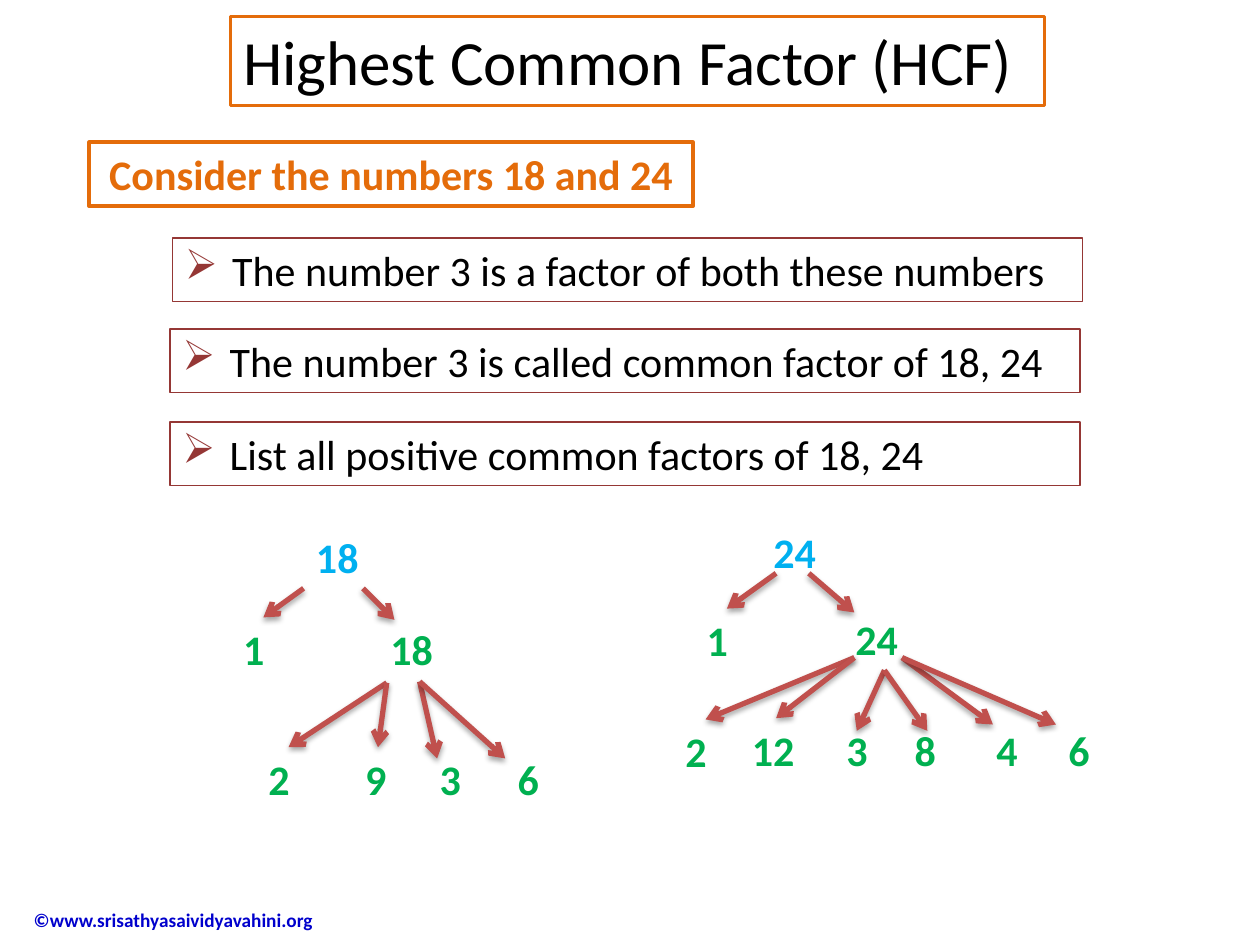
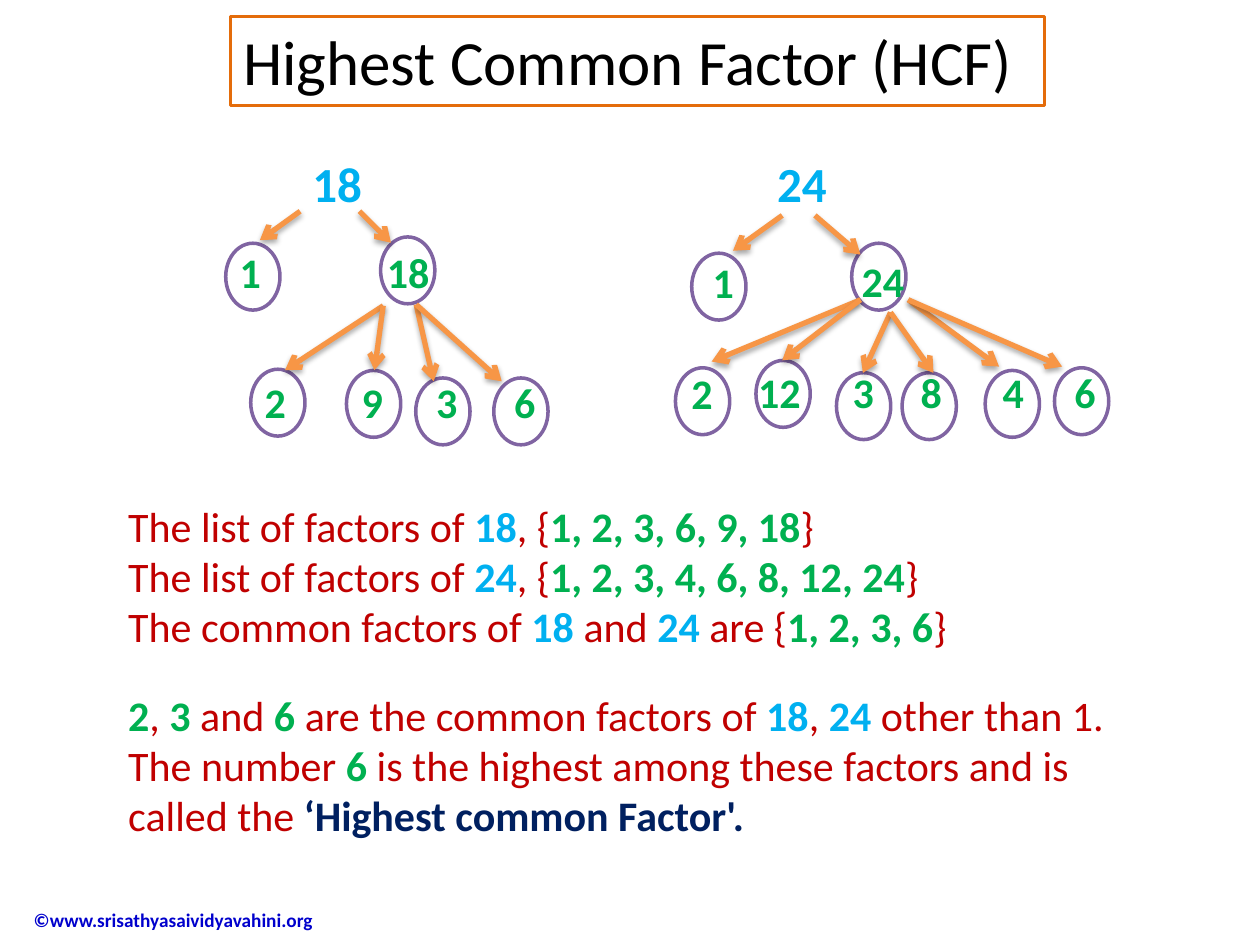
import pptx
import pptx.util
import pptx.dml.color
import pptx.enum.shapes
import pptx.enum.text
import pptx.oxml
import pptx.oxml.ns

Pt = pptx.util.Pt
RGB = pptx.dml.color.RGBColor
FONT = "Calibri"
BLACK = RGB(0, 0, 0)
WHITE = RGB(0xFF, 0xFF, 0xFF)
ORANGE = RGB(0xE4, 0x6C, 0x0A)
PEACH = RGB(0xF7, 0x96, 0x46)
MAROON = RGB(0x95, 0x37, 0x35)
BRICK = RGB(0xC0, 0x50, 0x4D)
RED = RGB(0xC0, 0, 0)
SKY = RGB(0, 0xB0, 0xF0)
GREEN = RGB(0, 0xB0, 0x50)
NAVY = RGB(0, 0x20, 0x60)
BLUE = RGB(0, 0, 0xCC)
PURPLE = RGB(0x80, 0x64, 0xA2)
NS = pptx.oxml.ns.nsdecls("a")
SHADOW = (
    f'<a:effectLst {NS}><a:outerShdw blurRad="40000" dist="23000" dir="5400000" '
    'rotWithShape="0"><a:srgbClr val="000000"><a:alpha val="35000"/></a:srgbClr>'
    "</a:outerShdw></a:effectLst>"
)


def label(slide, text, x, y, w, h, size, color, bold=True):
    box = slide.shapes.add_textbox(Pt(x), Pt(y), Pt(w), Pt(h))
    box.text_frame.word_wrap = True
    para = box.text_frame.paragraphs[0]
    para.text = text
    font = para.runs[0].font
    font.name, font.size, font.bold = FONT, Pt(size), bold
    font.color.rgb = color
    return box


def arrow(slide, start, end, color):
    line = slide.shapes.add_connector(
        pptx.enum.shapes.MSO_CONNECTOR.STRAIGHT, *[Pt(v) for v in start + end])
    line.line.color.rgb = color
    line.line.width = Pt(3)
    props = line.element.spPr
    stroke = props.find(pptx.oxml.ns.qn("a:ln"))
    stroke.append(pptx.oxml.parse_xml(f'<a:tailEnd {NS} type="arrow"/>'))
    props.append(pptx.oxml.parse_xml(SHADOW))


deck = pptx.Presentation()
deck.slide_width, deck.slide_height = Pt(720), Pt(540)
layout = deck.slide_layouts[5]
first, second = [deck.slides.add_slide(layout) for _ in range(2)]

footer = label(first, "©www.srisathyasaividyavahini.org", 12.2, 511.2, 182, 29, 11, BLUE)
footer.text_frame.vertical_anchor = pptx.enum.text.MSO_ANCHOR.MIDDLE
layout.shapes.element.append(footer.element)

for slide in (first, second):
    title = slide.shapes.title
    title.left, title.top, title.width, title.height = Pt(131.8), Pt(9.4), Pt(465), Pt(51)
    title.line.color.rgb = ORANGE
    title.line.width = Pt(1.5)
    frame = title.text_frame
    frame.text = "Highest Common Factor (HCF)"
    frame.word_wrap = True
    frame.auto_size = pptx.enum.text.MSO_AUTO_SIZE.NONE
    frame.vertical_anchor = pptx.enum.text.MSO_ANCHOR.TOP
    frame.paragraphs[0].alignment = pptx.enum.text.PP_ALIGN.LEFT
    font = frame.paragraphs[0].runs[0].font
    font.name, font.size = FONT, Pt(36)
    font.color.rgb = BLACK

intro = label(first, "Consider the numbers 18 and 24", 51, 81.4, 345, 36.4, 24, ORANGE)
intro.text_frame.paragraphs[0].alignment = pptx.enum.text.PP_ALIGN.CENTER
intro.line.color.rgb = ORANGE
intro.line.width = Pt(2.25)

points = [
    ("The number 3 is a factor of both these numbers", 98.6, 136),
    ("The number 3 is called common factor of 18, 24", 97.2, 188),
    ("List all positive common factors of 18, 24", 97.2, 241.2),
]
for text, x, y in points:
    box = label(first, text, x, y, 520, 36.4, 24, BLACK, False)
    box.line.color.rgb = MAROON
    box.line.width = Pt(0.75)
    props = box.text_frame.paragraphs[0]._p.get_or_add_pPr()
    props.set("marL", str(Pt(27)))
    props.set("indent", str(-Pt(27)))
    for tag in (f'<a:buClr {NS}><a:srgbClr val="{MAROON}"/></a:buClr>',
                f'<a:buChar {NS} char="➢"/>'):
        props.append(pptx.oxml.parse_xml(tag))

rings = [
    (129, 139), (217.5, 135.4), (143.3, 211), (198, 211.7), (237.6, 216), (282.2, 216),
    (395.3, 144.7), (486.7, 139), (386, 210.2), (432, 206), (478, 213), (515.5, 213),
    (563, 211.7), (602.6, 210.2),
]
for x, y in rings:
    ring = second.shapes.add_shape(
        pptx.enum.shapes.MSO_SHAPE.OVAL, Pt(x), Pt(y), Pt(31), Pt(38.2))
    ring.shadow.inherit = False
    ring.fill.solid()
    ring.fill.fore_color.rgb = WHITE
    ring.line.color.rgb = PURPLE
    ring.line.width = Pt(2)

trees = {
    "18": {
        "nodes": [("1", 131.8, 352.8), ("18", 216, 352.8), ("2", 146.2, 427),
                  ("9", 201.6, 427), ("3", 244.1, 427), ("6", 288.7, 427)],
        "arms": [((173.5, 336.2), [(150.5, 352.8)]),
                 ((207.4, 336.2), [(225.4, 354.2)]),
                 ((221, 390.2), [(164.9, 427), (216, 427)]),
                 ((239.8, 389.5), [(249.8, 433.4), (288.7, 433.4)])],
    },
    "24": {
        "nodes": [("1", 396.7, 347.8), ("24", 481.7, 347), ("2", 384.5, 411),
                  ("12", 422.6, 410.4), ("3", 476.6, 410.4), ("8", 515.5, 410.4),
                  ("4", 562.3, 410.4), ("6", 603.4, 410.4)],
        "arms": [((443.5, 327.6), [(415.4, 347.8)]),
                 ((462.2, 327.6), [(488.2, 350)]),
                 ((488.2, 375.8), [(403.2, 411.1), (443.5, 410.4)]),
                 ((505.4, 383), [(489.6, 417.6), (529.9, 417.6)]),
                 ((515.5, 375.8), [(567.4, 414), (603.4, 414)])],
    },
}
plans = [
    (first, "18", (173.5, 300.2), 24, 0, 0, BRICK),
    (first, "24", (434.9, 297.4), 24, 0, 0, BRICK),
    (second, "18", (171.4, 84.2), 28, -2, -215.5, PEACH),
    (second, "24", (437, 84.2), 28, 3.5, -204.5, PEACH),
]
for slide, root, (left, top), size, dx, dy, color in plans:
    label(slide, root, left, top, 52, 40, size, SKY)
    for text, x, y in trees[root]["nodes"]:
        label(slide, text, x + dx, y + dy, 48, 36.4, 24, GREEN)
    for (x, y), tips in trees[root]["arms"]:
        for right, low in tips:
            arrow(slide, (x + dx, y + dy), (right + dx, low + dy), color)

notes = [
    (282.2, [
        [("The list of factors of ", RED), ("18", SKY), (", {", RED),
         ("1, 2, 3, 6, 9, 18", GREEN), ("}", RED)],
        [("The list of factors of ", RED), ("24", SKY), (", {", RED),
         ("1, 2, 3, 4, 6, 8, 12, 24", GREEN), ("}", RED)],
        [("The common factors of ", RED), ("18", SKY), (" and ", RED), ("24", SKY),
         (" are {", RED), ("1, 2, 3, 6", GREEN), ("}", RED)],
    ]),
    (390.2, [
        [("2", GREEN), (", ", RED), ("3", GREEN), (" and ", RED), ("6", GREEN),
         (" are the common factors of ", RED), ("18", SKY), (", ", RED), ("24", SKY),
         (" other than 1.", RED)],
        [("The number ", RED), ("6", GREEN),
         (" is the highest among these factors and is called the ", RED),
         ("‘Highest common Factor'.", NAVY)],
    ]),
]
for top, paras in notes:
    frame = second.shapes.add_textbox(Pt(66.2), Pt(top), Pt(609), Pt(94.3)).text_frame
    frame.word_wrap = True
    for i, parts in enumerate(paras):
        para = frame.add_paragraph() if i else frame.paragraphs[0]
        for text, color in parts:
            run = para.add_run()
            run.text = text
            run.font.name, run.font.size = FONT, Pt(24)
            run.font.bold = color != RED
            run.font.color.rgb = color

deck.save("out.pptx")
